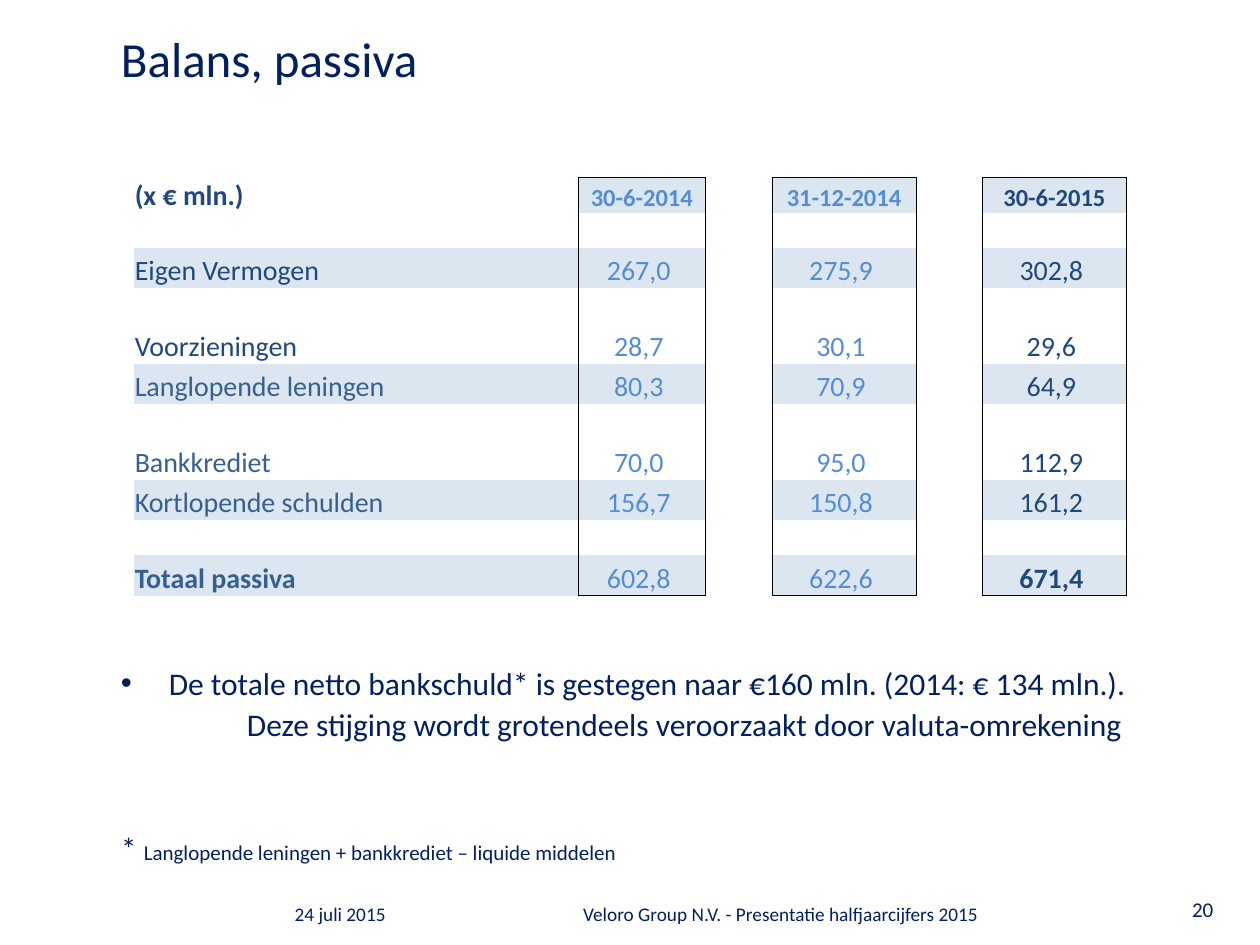
import pptx
import pptx.util
import pptx.dml.color
import pptx.enum.text
import pptx.oxml
import pptx.oxml.ns

FONT = "Calibri"
COLORS = {
    "navy": "002060",
    "label": "1F497D",
    "sublabel": "366092",
    "past": "538DD5",
    "band": "DCE6F1",
    "white": "FFFFFF",
    "border": "000000",
}

TITLE = "Balans, passiva"
HEADER = ("(x € mln.)", "30-6-2014", "31-12-2014", "30-6-2015")
BALANCE = [
    None,
    ("Eigen Vermogen", "267,0", "275,9", "302,8"),
    None,
    ("Voorzieningen", "28,7", "30,1", "29,6"),
    ("Langlopende leningen", "80,3", "70,9", "64,9"),
    None,
    ("Bankkrediet", "70,0", "95,0", "112,9"),
    ("Kortlopende schulden", "156,7", "150,8", "161,2"),
    None,
    ("Totaal passiva", "602,8", "622,6", "671,4"),
]
BANDED = {"Eigen Vermogen", "Langlopende leningen", "Kortlopende schulden", "Totaal passiva"}
MAIN_LABELS = {"(x € mln.)", "Eigen Vermogen", "Voorzieningen"}
COL_WIDTHS = (3.53, 1.01, 0.53, 1.14, 0.53, 1.14)
GAP_ROW, TEXT_ROW = 0.28, 0.32
VALUE_COLS = (1, 3, 5)

BULLET = "De totale netto bankschuld* is gestegen naar €160 mln. (2014: € 134 mln.)."
CAUSE = "Deze stijging wordt grotendeels veroorzaakt door valuta-omrekening"
FOOTNOTE = (("* ", 18), ("Langlopende leningen + bankkrediet – liquide middelen", 12))
FOOTERS = [
    ("24 juli 2015", (2.24, 7.11, 1.69, 0.33), 11, "LEFT"),
    ("Veloro Group N.V. - Presentatie halfjaarcijfers 2015", (4.53, 7.11, 4.57, 0.33), 11, "LEFT"),
    ("20", (9.17, 7.07, 0.75, 0.37), 12, "CENTER"),
]

Inches, Pt = pptx.util.Inches, pptx.util.Pt
ALIGN = pptx.enum.text.PP_ALIGN
ANCHOR = pptx.enum.text.MSO_ANCHOR


def rgb(name):
    return pptx.dml.color.RGBColor.from_string(COLORS[name])


def style(r, size, color="navy", bold=False):
    r.font.name, r.font.size, r.font.bold = FONT, Pt(size), bold
    r.font.color.rgb = rgb(color)


def place(sp, left, top, width, height):
    sp.left, sp.top, sp.width, sp.height = map(Inches, (left, top, width, height))


def setup_placeholder(sp, box):
    place(sp, *box)
    tf = sp.text_frame
    tf.word_wrap = True
    tf.auto_size = pptx.enum.text.MSO_AUTO_SIZE.NONE
    tf.vertical_anchor = ANCHOR.TOP
    tf.margin_left = tf.margin_right = tf.margin_top = tf.margin_bottom = 0
    return tf


def setup_paragraph(p, line, before=0, margin=0, bullet=None):
    p.alignment = ALIGN.LEFT
    p.line_spacing, p.space_before = Pt(line), Pt(before)
    pPr = p._p.get_or_add_pPr()
    pPr.set("marL", str(Inches(margin)))
    pPr.set("indent", str(-Inches(margin) if bullet else 0))
    tag = f'buChar char="{bullet}"' if bullet else "buNone"
    pPr.append(pptx.oxml.parse_xml(f"<a:{tag} {pptx.oxml.ns.nsdecls('a')}/>"))


def add_borders(cell, sides):
    tcPr = cell._tc.get_or_add_tcPr()
    for side in sides:
        tcPr.append(pptx.oxml.parse_xml(
            f'<a:ln{side} {pptx.oxml.ns.nsdecls("a")} w="{Pt(0.5)}"><a:solidFill>'
            f'<a:srgbClr val="{COLORS["border"]}"/></a:solidFill></a:ln{side}>'))


def add_title(s):
    tf = setup_placeholder(s.shapes.title, (0.96, 0.28, 8.76, 0.94))
    tf.text = TITLE
    setup_paragraph(tf.paragraphs[0], 30)
    style(tf.paragraphs[0].runs[0], 28)


def add_body(s):
    tf = setup_placeholder(s.placeholders[1], (0.96, 5.29, 8.76, 1.97))
    tf.text = BULLET
    setup_paragraph(tf.paragraphs[0], 20, margin=0.38, bullet="•")
    p = tf.add_paragraph()
    p.text = CAUSE
    setup_paragraph(p, 20, before=3.6, margin=1)
    for p in tf.paragraphs:
        style(p.runs[0], 18)
    p = tf.add_paragraph()
    setup_paragraph(p, 20, before=51)
    for text, size in FOOTNOTE:
        r = p.add_run()
        r.text = text
        style(r, size)


def add_balance(s):
    rows = [HEADER] + BALANCE
    heights = [TEXT_ROW if row and row is not HEADER else GAP_ROW for row in rows]
    frame = s.shapes.add_table(len(rows), len(COL_WIDTHS), Inches(1.06), Inches(1.41),
                               Inches(sum(COL_WIDTHS)), Inches(sum(heights)))
    table = frame.table
    table.first_row = table.horz_banding = False
    style_id = table._tbl.tblPr.find(pptx.oxml.ns.qn("a:tableStyleId"))
    style_id.text = "{2D5ABB26-0587-4C30-8999-92F81FD0307C}"
    for col, width in zip(table.columns, COL_WIDTHS):
        col.width = Inches(width)
    for i, row in enumerate(rows):
        table.rows[i].height = Inches(heights[i])
        for c in range(len(COL_WIDTHS)):
            fill_cell(table.cell(i, c), row, c, i == len(rows) - 1)


def fill_cell(cell, row, c, is_total):
    is_header = row is HEADER
    is_value = c in VALUE_COLS
    cell.margin_left = cell.margin_right = cell.margin_top = Inches(0.01)
    cell.margin_bottom = 0
    cell.vertical_anchor = ANCHOR.BOTTOM
    sides = ["L"] * (c > 0) + ["R"]
    if is_value:
        sides += ["T"] * is_header + ["B"] * is_total
    add_borders(cell, sides)
    banded = row and (is_value if is_header else row[0] in BANDED and (c == 0 or is_value))
    cell.fill.solid()
    cell.fill.fore_color.rgb = rgb("band" if banded else "white")
    p = cell.text_frame.paragraphs[0]
    if not row or not (c == 0 or is_value):
        p._p.get_or_add_endParaRPr().set("sz", "1000")
        return
    text = row[(c + 1) // 2]
    p.text = f"{text} " if is_value and not is_header else text
    p.alignment = ALIGN.CENTER if is_value else ALIGN.LEFT
    if c == 0:
        color = "label" if text in MAIN_LABELS else "sublabel"
    else:
        color = "label" if c == VALUE_COLS[-1] else "past"
    bold = is_header or is_total and c in (0, VALUE_COLS[-1])
    style(p.runs[0], 14 if is_header and is_value else 16, color, bold)


def add_footers(s):
    for text, box, size, align in FOOTERS:
        tf = s.shapes.add_textbox(*map(Inches, box)).text_frame
        tf.word_wrap = True
        tf.text = text
        tf.paragraphs[0].alignment = ALIGN[align]
        style(tf.paragraphs[0].runs[0], size)


def main():
    prs = pptx.Presentation()
    prs.slide_width, prs.slide_height = Inches(10), Inches(7.5)
    s = prs.slides.add_slide(prs.slide_layouts[1])
    add_title(s)
    add_body(s)
    add_footers(s)
    add_balance(s)
    prs.save("out.pptx")


if __name__ == "__main__":
    main()
